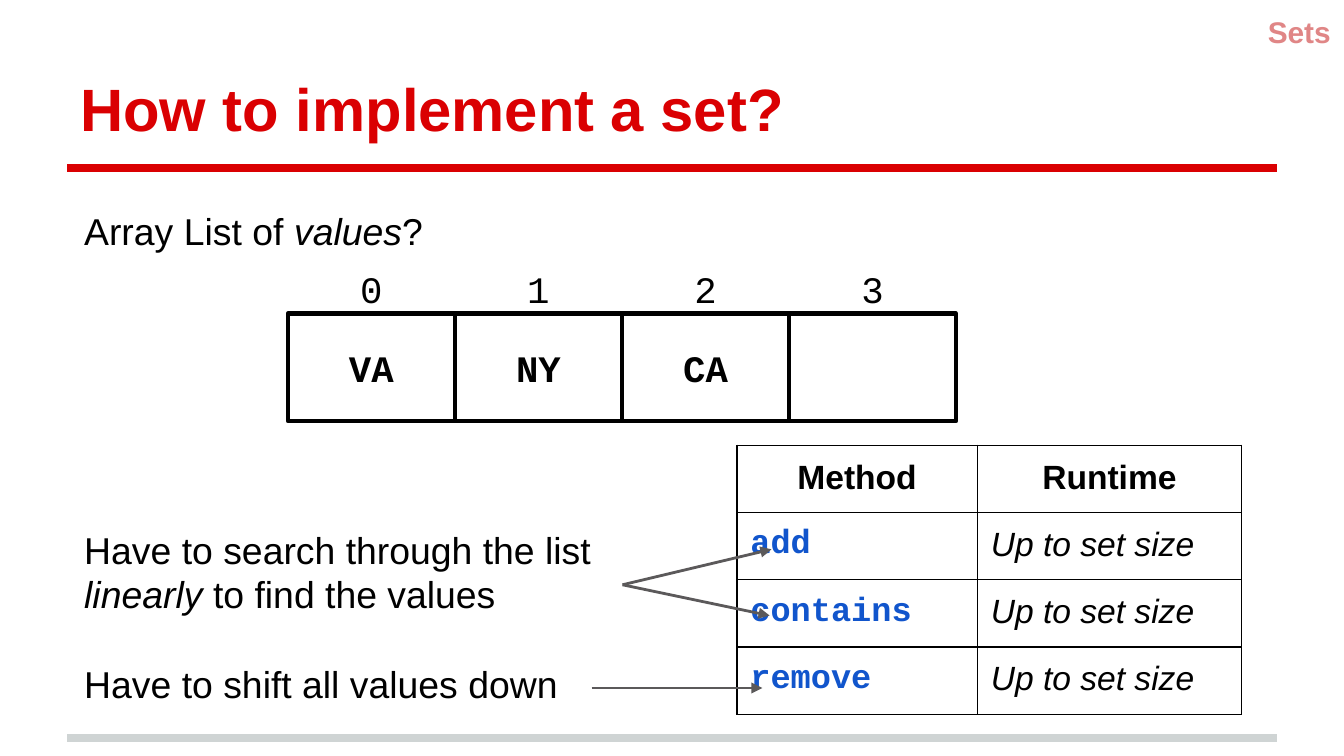
from pptx import Presentation
from pptx.dml.color import RGBColor
from pptx.enum import shapes, text
from pptx.oxml import parse_xml
from pptx.oxml.ns import nsdecls, qn
from pptx.util import Pt

SANS, MONO = "Arial", "Courier New"
BLACK, RED, PINK, BLUE = "000000", "DA0002", "E08686", "1155CC"
GRAY, SILVER = "5B595A", "CFD4D4"
LEFT, CENTER, RIGHT = text.PP_ALIGN.LEFT, text.PP_ALIGN.CENTER, text.PP_ALIGN.RIGHT
TOP, MIDDLE, BOTTOM = text.MSO_ANCHOR.TOP, text.MSO_ANCHOR.MIDDLE, text.MSO_ANCHOR.BOTTOM

TITLE = "How to implement a set?"
SECTION = "Sets"
QUESTION = [["Array List of ", "*values", "?"]]
REASONS = [
    ["Have to search through the list ", "*linearly", " to find the values"],
    ["Have to shift all values down"],
]
VALUES = ["VA", "NY", "CA", ""]
HEADERS = ["Method", "Runtime"]
RUNTIMES = [
    ("add", "*Up to set size"),
    ("contains", "*Up to set size"),
    ("remove", "*Up to set size"),
]
RULES = [(395.3, SILVER), (90, RED)]
ARROWS = [
    ((317, 368.6), (408.5, 368.6)),
    ((333.5, 313.3), (413.3, 294.3)),
    ((333.5, 313.3), (412.3, 329.8)),
]

ARRAY_LEFT, ARRAY_TOP, BOX_WIDTH, BOX_HEIGHT = 154.2, 168, 89.5, 57.6
INDEX_TOP, INDEX_HEIGHT = 145.6, 18
TABLE_LEFT, TABLE_TOP, ROW_HEIGHT = 394.8, 238.5, 34.7
COLUMN_WIDTHS = [128.8, 141.6]


def color(hex_string):
    return RGBColor.from_string(hex_string)


def write(frame, paragraphs, size, hue=BLACK, font=SANS, bold=False, align=LEFT, gap=0):
    for number, pieces in enumerate(paragraphs):
        paragraph = frame.add_paragraph() if number else frame.paragraphs[0]
        paragraph.alignment = align
        if number:
            paragraph.space_before = Pt(gap)
        for piece in pieces:
            run = paragraph.add_run()
            run.text = piece.lstrip("*")
            run.font.name = font
            run.font.size = Pt(size)
            run.font.bold = bold
            run.font.italic = piece.startswith("*")
            run.font.color.rgb = color(hue)


def set_frame(frame, anchor):
    frame.word_wrap = True
    frame.vertical_anchor = anchor
    frame.margin_left = frame.margin_right = Pt(7.2)
    frame.margin_top = frame.margin_bottom = Pt(7.2)


def add_text(slide, box, paragraphs, size, anchor=TOP, **style):
    frame = slide.shapes.add_textbox(*map(Pt, box)).text_frame
    set_frame(frame, anchor)
    write(frame, paragraphs, size, **style)


def add_line(slide, start, end, hue, width, arrow=False):
    line = slide.shapes.add_connector(
        shapes.MSO_CONNECTOR.STRAIGHT, *map(Pt, (*start, *end)))
    line.line.color.rgb = color(hue)
    line.line.width = Pt(width)
    properties = line._element.spPr
    if arrow:
        properties.find(qn("a:ln")).append(
            parse_xml(f'<a:tailEnd {nsdecls("a")} type="triangle"/>'))
    properties.append(parse_xml(f'<a:effectLst {nsdecls("a")}/>'))


def add_array(slide):
    for index, value in enumerate(VALUES):
        left = ARRAY_LEFT + index * BOX_WIDTH
        box = slide.shapes.add_shape(
            shapes.MSO_SHAPE.RECTANGLE,
            *map(Pt, (left, ARRAY_TOP, BOX_WIDTH, BOX_HEIGHT)))
        box.shadow.inherit = False
        box.fill.background()
        box.line.color.rgb = color(BLACK)
        box.line.width = Pt(2.25)
        set_frame(box.text_frame, MIDDLE)
        if value:
            write(box.text_frame, [[value]], 20, font=MONO, bold=True, align=CENTER)
        add_text(slide, (left, INDEX_TOP, BOX_WIDTH, INDEX_HEIGHT), [[str(index)]],
                 20, MIDDLE, font=MONO, align=CENTER)


def style_cell(cell):
    properties = cell._tc.get_or_add_tcPr()
    for side in ("lnL", "lnR", "lnT", "lnB"):
        properties.append(parse_xml(
            f'<a:{side} {nsdecls("a")} w="{Pt(0.75)}"><a:solidFill>'
            f'<a:srgbClr val="{BLACK}"/></a:solidFill></a:{side}>'))
    cell.fill.background()
    cell.margin_left = cell.margin_right = Pt(7.2)
    cell.margin_top = cell.margin_bottom = Pt(7.2)


def add_runtimes(slide):
    rows = [HEADERS, *RUNTIMES]
    table = slide.shapes.add_table(
        len(rows), len(HEADERS), Pt(TABLE_LEFT), Pt(TABLE_TOP),
        Pt(sum(COLUMN_WIDTHS)), Pt(ROW_HEIGHT * len(rows))).table
    table.first_row = table.horz_banding = False
    for column, width in zip(table.columns, COLUMN_WIDTHS):
        column.width = Pt(width)
    header = {"bold": True, "align": CENTER}
    body = [{"bold": True, "font": MONO, "hue": BLUE}, {}]
    for row_number, row in enumerate(rows):
        table.rows[row_number].height = Pt(ROW_HEIGHT)
        for column_number, label in enumerate(row):
            cell = table.cell(row_number, column_number)
            style_cell(cell)
            style = body[column_number] if row_number else header
            write(cell.text_frame, [[label]], 18, **style)


def main():
    presentation = Presentation()
    presentation.slide_width, presentation.slide_height = Pt(720), Pt(405)
    slide = presentation.slides.add_slide(presentation.slide_layouts[6])
    for height, hue in RULES:
        add_line(slide, (36, height), (684, height), hue, 4)
    add_text(slide, (36, 16.6, 648, 67.6), [[TITLE]], 32, BOTTOM, hue=RED, bold=True)
    add_text(slide, (38, 104.4, 332, 38), QUESTION, 20)
    add_text(slide, (38, 275, 345, 91), REASONS, 20, gap=24)
    add_array(slide)
    add_runtimes(slide)
    add_text(slide, (551.5, 0, 168.5, 29), [[SECTION]], 16,
             hue=PINK, bold=True, align=RIGHT)
    for start, end in ARROWS:
        add_line(slide, start, end, GRAY, 1.5, arrow=True)
    presentation.save("out.pptx")


if __name__ == "__main__":
    main()
